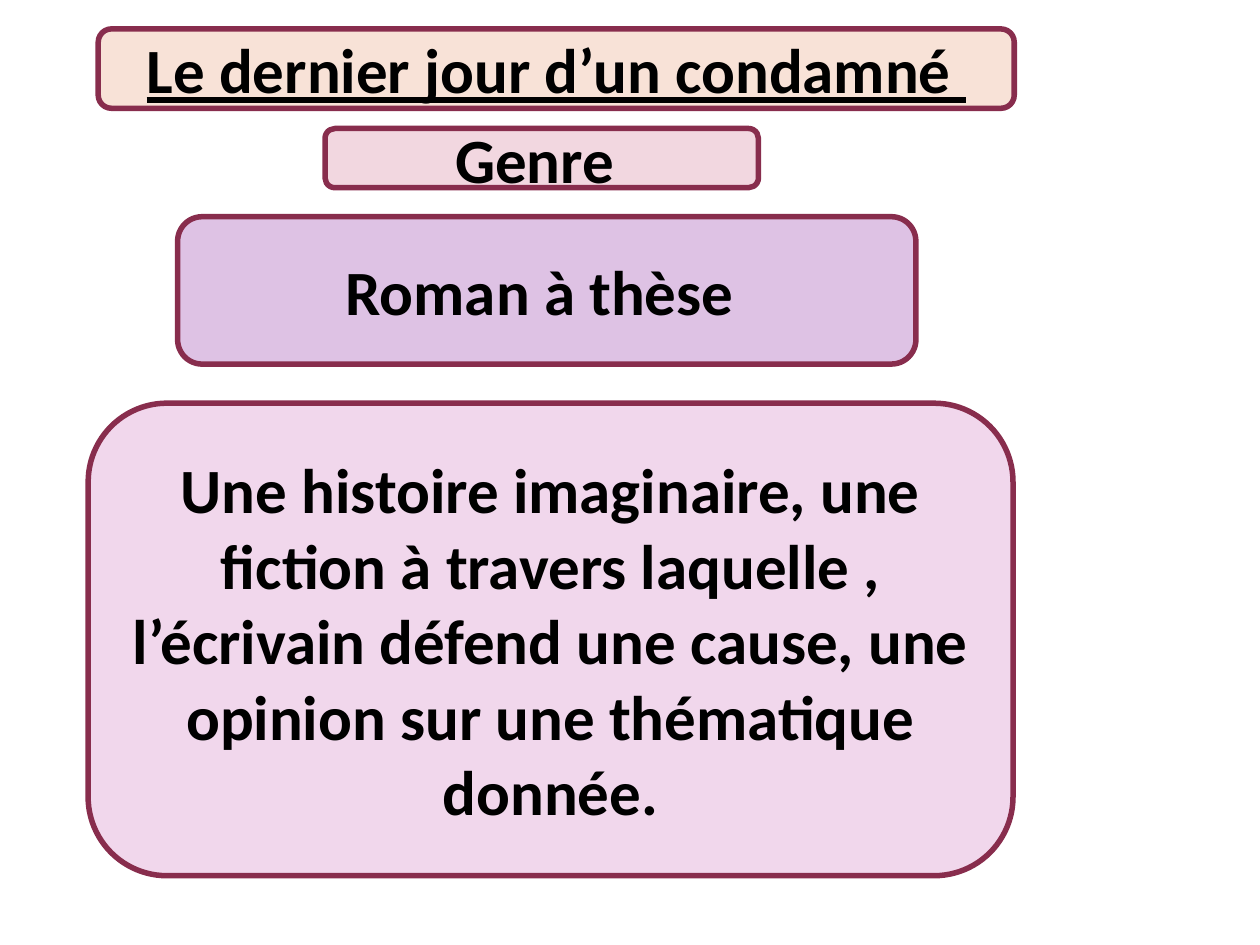
from dataclasses import dataclass

from pptx import Presentation
from pptx import util as u
from pptx.dml.color import RGBColor
from pptx.enum import shapes, text

WIDE, HIGH = u.Inches(10), u.Inches(7.5)
COLS, ROWS = 1000, 750  # fine grid over the slide

INK = RGBColor(0x00, 0x00, 0x00)
WINE = RGBColor(0x88, 0x2D, 0x4D)
PEACH = RGBColor(0xF8, 0xE2, 0xD7)
ROSE = RGBColor(0xF2, 0xD7, 0xE0)
LILAC = RGBColor(0xDE, 0xC2, 0xE4)
PINK = RGBColor(0xF1, 0xD7, 0xEC)

FONT = {"name": "Calibri", "size": u.Pt(36), "bold": True}
FRAME = {"word_wrap": True, "vertical_anchor": text.MSO_ANCHOR.MIDDLE}


@dataclass
class Card:
    words: str
    col: int
    row: int
    cols: int
    rows: int
    fill: RGBColor
    under: bool = False


CARDS = [
    Card("Le dernier jour d’un condamné ", 78, 23, 727, 63, PEACH, True),
    Card("Genre ", 258, 102, 344, 47, ROSE),
    Card("Roman à thèse ", 141, 172, 586, 117, LILAC),
    Card("Une histoire imaginaire, une fiction à travers laquelle , "
         "l’écrivain défend une cause, une opinion sur une thématique donnée.",
         70, 320, 734, 375, PINK),
]


def apply(target: object, values: dict) -> None:
    for name, value in values.items():
        setattr(target, name, value)


def draw(slide, card: Card) -> None:
    box = slide.shapes.add_shape(
        shapes.MSO_SHAPE.ROUNDED_RECTANGLE,
        WIDE * card.col // COLS, HIGH * card.row // ROWS,
        WIDE * card.cols // COLS, HIGH * card.rows // ROWS)
    box.shadow.inherit = False
    box.fill.solid()
    box.fill.fore_color.rgb = card.fill
    box.line.color.rgb = WINE
    box.line.width = u.Pt(3.15)
    apply(box.text_frame, FRAME)
    par = box.text_frame.paragraphs[0]
    par.alignment = text.PP_ALIGN.CENTER
    run = par.add_run()
    run.text = card.words
    apply(run.font, FONT | {"underline": card.under})
    run.font.color.rgb = INK


def main() -> None:
    deck = Presentation()
    apply(deck, {"slide_width": WIDE, "slide_height": HIGH})
    slide = deck.slides.add_slide(deck.slide_layouts[6])
    for card in CARDS:
        draw(slide, card)
    deck.save("out.pptx")


if __name__ == "__main__":
    main()
